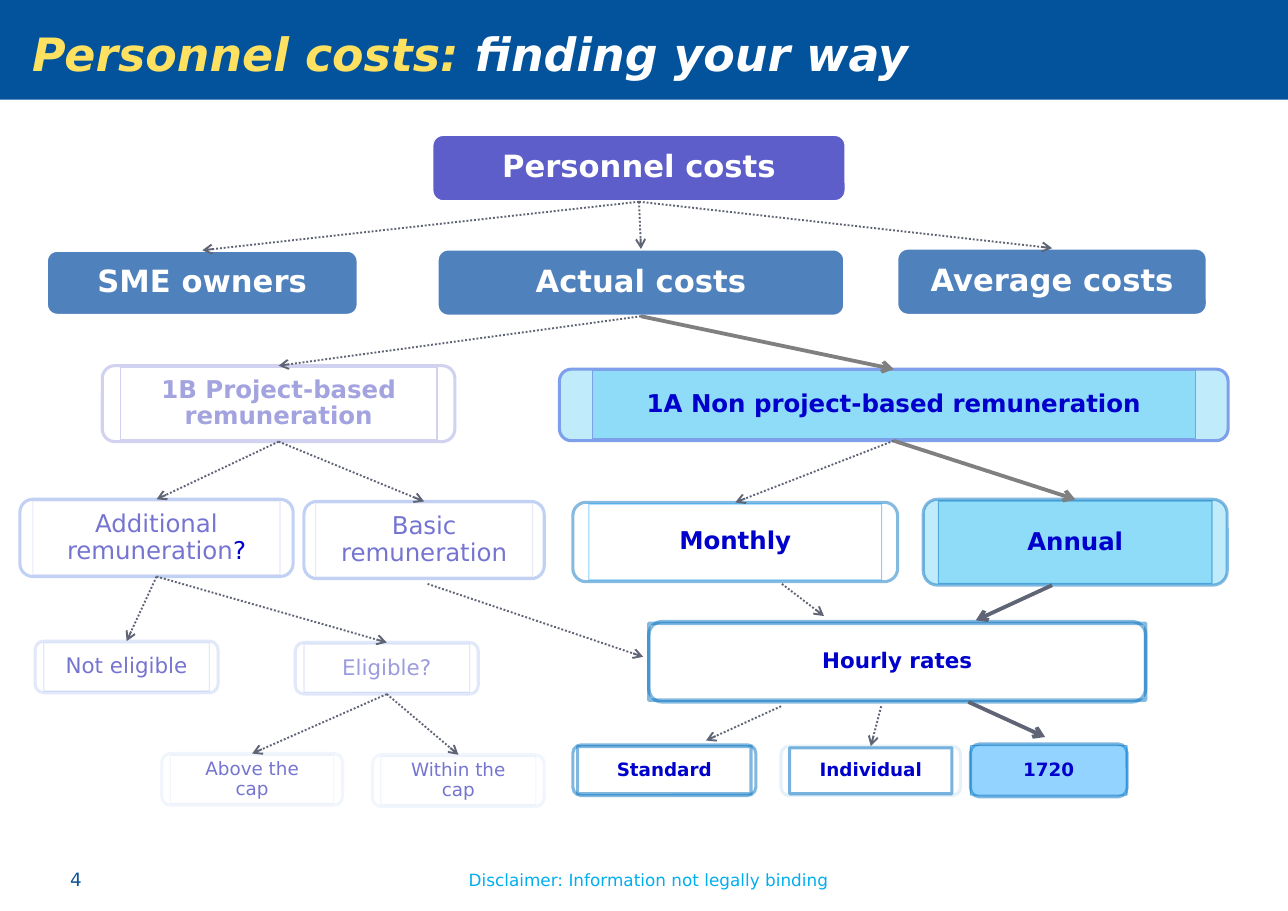
from dataclasses import dataclass

from lxml import etree
from pptx import Presentation
from pptx.dml.color import RGBColor
from pptx.enum.dml import MSO_LINE
from pptx.enum.shapes import MSO_CONNECTOR, MSO_SHAPE
from pptx.enum.text import MSO_ANCHOR, PP_ALIGN
from pptx.oxml.ns import qn
from pptx.util import Cm, Pt

ROUND, RECT = MSO_SHAPE.ROUNDED_RECTANGLE, MSO_SHAPE.RECTANGLE
STRAIGHT, DOTTED = MSO_CONNECTOR.STRAIGHT, MSO_LINE.ROUND_DOT
LEFT, CENTER = PP_ALIGN.LEFT, PP_ALIGN.CENTER
TOP, MIDDLE = MSO_ANCHOR.TOP, MSO_ANCHOR.MIDDLE
TOP_SIDE, BOTTOM_SIDE = 0, 2


@dataclass(frozen=True)
class Theme:
    font: str = "DejaVu Sans"
    white: str = "FFFFFF"
    banner: str = "02539C"
    yellow: str = "FFE161"
    number: str = "0F5494"
    disclaimer: str = "00AEEF"
    root: str = "5E5ECA"
    branch: str = "4F81BD"
    lilac: str = "D1D1F0"
    periwinkle: str = "7E9FEA"
    blue: str = "0070C0"
    azure: str = "0099FF"
    cyan: str = "00B0F0"
    strong_text: str = "0000CC"
    muted_text: str = "7575D1"
    faded_text: str = "9C9CDF"
    project_text: str = "A3A3E0"
    arrow: str = "606576"
    chosen_arrow: str = "808080"
    title_size: int = 30
    head_size: int = 20
    option_size: int = 16
    detail_size: int = 14
    leaf_size: int = 12
    footer_size: int = 11


class TreeSlide:
    """Draws the elements of a decision tree on one slide in one theme."""

    def __init__(self, prs, theme):
        self.theme = theme
        self.s = prs.slides.add_slide(prs.slide_layouts[5])

    def put_text(self, sp, runs, size, bold=False, italic=False, align=CENTER,
                 anchor=MIDDLE, margins=(0.43, 0.2), spacing=0.9):
        tf = sp.text_frame
        across, down = map(Cm, margins)
        frame = {"word_wrap": True, "vertical_anchor": anchor,
                 "margin_left": across, "margin_right": across,
                 "margin_top": down, "margin_bottom": down}
        for name, value in frame.items():
            setattr(tf, name, value)
        p = tf.paragraphs[0]
        p.alignment, p.line_spacing = align, spacing
        look = {"name": self.theme.font, "size": Pt(size), "bold": bold, "italic": italic}
        for text, colour in runs:
            r = p.add_run()
            r.text = text
            for name, value in look.items():
                setattr(r.font, name, value)
            r.font.color.rgb = RGBColor.from_string(colour)

    def paint(self, fill, parent, colour, alpha):
        fill.solid()
        fill.fore_color.rgb = RGBColor.from_string(colour)
        if alpha < 100:
            clr = parent.find(qn("a:solidFill")).find(qn("a:srgbClr"))
            etree.SubElement(clr, qn("a:alpha")).set("val", str(alpha * 1000))

    def shape(self, kind, box, fill=None, line=None):
        sp = self.s.shapes.add_shape(kind, *map(Cm, box))
        sp.shadow.inherit = False
        sp.fill.background()
        sp.line.fill.background()
        spPr = sp.element.spPr
        if fill:
            self.paint(sp.fill, spPr, *fill)
        if line:
            colour, width, alpha = line
            sp.line.width = Pt(width)
            self.paint(sp.line.fill, spPr.find(qn("a:ln")), colour, alpha)
        return sp

    def title(self, box, runs, banner_box):
        sp = self.s.shapes.title
        sp.left, sp.top, sp.width, sp.height = map(Cm, box)
        self.put_text(sp, runs, self.theme.title_size, True, True, LEFT,
                      margins=(0.28, 0.15), spacing=1.0)
        banner = self.shape(RECT, banner_box, (self.theme.banner, 100))
        sp.element.addprevious(banner.element)

    def label(self, box, text, size, colour, align):
        sp = self.s.shapes.add_textbox(*map(Cm, box))
        self.put_text(sp, [(text, colour)], size, align=align, anchor=TOP,
                      margins=(0.25, 0.13), spacing=1.0)

    def head(self, box, text, fill):
        white = self.theme.white
        sp = self.shape(ROUND, box, (fill, 100), (white, 2, 100))
        self.put_text(sp, [(text, white)], self.theme.head_size, True)
        return sp

    def option(self, box, inset, runs, size, bold, outer, inner, fill=None):
        left, top, width, height = box
        rim = 0.04
        sp = self.shape(ROUND, box, fill or (self.theme.white, 100), outer)
        panel = self.shape(RECT, (left + inset, top + rim, width - 2 * inset,
                                  height - 2 * rim), fill, inner)
        self.put_text(panel, runs, size, bold)
        return sp

    def arrow(self, start, end, begin_at=None, end_at=None, colour=None):
        c = self.s.shapes.add_connector(STRAIGHT, *map(Cm, start + end))
        if begin_at:
            c.begin_connect(begin_at, BOTTOM_SIDE)
        if end_at:
            c.end_connect(end_at, TOP_SIDE)
        c.line.color.rgb = RGBColor.from_string(colour or self.theme.arrow)
        c.line.width = Pt(2.5 if colour else 1.25)
        if not colour:
            c.line.dash_style = DOTTED
        spPr = c.element.spPr
        etree.SubElement(spPr.find(qn("a:ln")), qn("a:tailEnd")).set("type", "arrow")
        etree.SubElement(spPr, qn("a:effectLst"))


def main():
    prs = Presentation()
    prs.slide_width, prs.slide_height = Cm(29.7), Cm(21)
    t = Theme()
    tree = TreeSlide(prs, t)
    tree.title((0.46, -0.2, 29, 2.87),
               [("Personnel costs: ", t.yellow), ("finding your way", t.white)],
               (0, 0, 29.7, 2.3))
    tree.label((1.37, 19.89, 2.08, 0.76), "4", t.leaf_size, t.number, LEFT)
    tree.label((10.26, 19.91, 9.4, 0.74), "Disclaimer: Information not legally binding",
               t.footer_size, t.disclaimer, CENTER)

    heads = {
        "root": ((9.96, 3.1, 9.55, 1.55), "Personnel costs", t.root),
        "sme": ((1.07, 5.77, 7.19, 1.5), "SME owners", t.branch),
        "actual": ((10.08, 5.74, 9.4, 1.55), "Actual costs", t.branch),
        "average": ((20.68, 5.72, 7.16, 1.55), "Average costs", t.branch),
    }
    nodes = {name: tree.head(*args) for name, args in heads.items()}

    def strong(text, size):
        return [(text, t.strong_text)], size, True

    def muted(text, size, colour=t.muted_text):
        return [(text, colour)], size, False

    def rims(colour, alpha, inner=None):
        return (colour, 2, alpha), (inner or colour, 0.75, alpha)

    remuneration = rims(t.periwinkle, 48, t.lilac)
    eligibility, cap = rims(t.periwinkle, 24), rims(t.periwinkle, 10)
    hourly, standard = (t.blue, 2.25, 47), (t.blue, 2, 50)
    options = {
        "project": ((2.36, 8.43, 8.13, 1.75), 0.41,
                    [("1B Project-based remuneration", t.project_text)],
                    t.option_size, True, *rims(t.lilac, 100)),
        "non_project": ((12.9, 8.51, 15.42, 1.65), 0.76,
                        *strong("1A Non project-based remuneration", t.option_size),
                        *rims(t.periwinkle, 100), (t.cyan, 25)),
        "monthly": ((13.21, 11.58, 7.49, 1.83), 0.37, *strong("Monthly", t.option_size),
                    *rims(t.blue, 48, t.azure)),
        "annual": ((21.29, 11.51, 7.01, 1.98), 0.35, *strong("Annual", t.option_size),
                   *rims(t.blue, 48), (t.cyan, 25)),
        "additional": ((0.46, 11.51, 6.3, 1.78), 0.3,
                       [("Additional remuneration", t.muted_text), ("?", t.strong_text)],
                       t.option_size, False, *remuneration),
        "basic": ((7.01, 11.56, 5.54, 1.78), 0.27,
                  *muted("Basic remuneration", t.option_size), *remuneration),
        "not_eligible": ((0.81, 14.78, 4.22, 1.19), 0.2,
                         *muted("Not eligible", t.detail_size), *eligibility),
        "eligible": ((6.81, 14.81, 4.22, 1.19), 0.2,
                     *muted("Eligible?", t.detail_size, t.faded_text), *eligibility),
        "hourly": ((14.96, 14.33, 11.46, 1.85), 0, *strong("Hourly rates", t.detail_size),
                   hourly, hourly),
        "above": ((3.73, 17.37, 4.17, 1.19), 0.2, *muted("Above the cap", t.leaf_size), *cap),
        "within": ((8.59, 17.4, 3.96, 1.19), 0.19, *muted("Within the cap", t.leaf_size), *cap),
        "standard": ((13.21, 17.17, 4.22, 1.17), 0.11, *strong("Standard", t.leaf_size),
                     standard, standard),
        "individual": ((18.01, 17.2, 4.14, 1.14), 0.2, *strong("Individual", t.leaf_size),
                       (t.blue, 2, 10), (t.blue, 2, 52)),
        "fixed": ((22.38, 17.15, 3.61, 1.22), 0, *strong("1720", t.leaf_size),
                  *rims(t.blue, 49), (t.azure, 24)),
    }
    nodes.update({name: tree.option(*args) for name, args in options.items()})

    branches = {"root": ("sme", "actual", "average"), "actual": ("project", "non_project"),
                "non_project": ("monthly", "annual"), "project": ("additional", "basic"),
                "additional": ("not_eligible", "eligible"), "eligible": ("above", "within")}
    for parent, children in branches.items():
        for child in children:
            tree.arrow((0, 0), (0, 0), nodes[parent], nodes[child],
                       t.chosen_arrow if child in ("non_project", "annual") else None)
    tree.arrow((20.32, 16.28), (20.08, 17.2), end_at=nodes["individual"])
    for start, end, colour in (((9.86, 13.46), (14.83, 15.14), None),
                               ((18.03, 13.46), (19, 14.2), None),
                               ((24.26, 13.49), (22.5, 14.3), t.arrow),
                               ((22.33, 16.18), (24.1, 16.99), t.arrow),
                               ((18.01, 16.28), (16.28, 17.07), None)):
        tree.arrow(start, end, colour=colour)
    prs.save("out.pptx")


if __name__ == "__main__":
    main()
